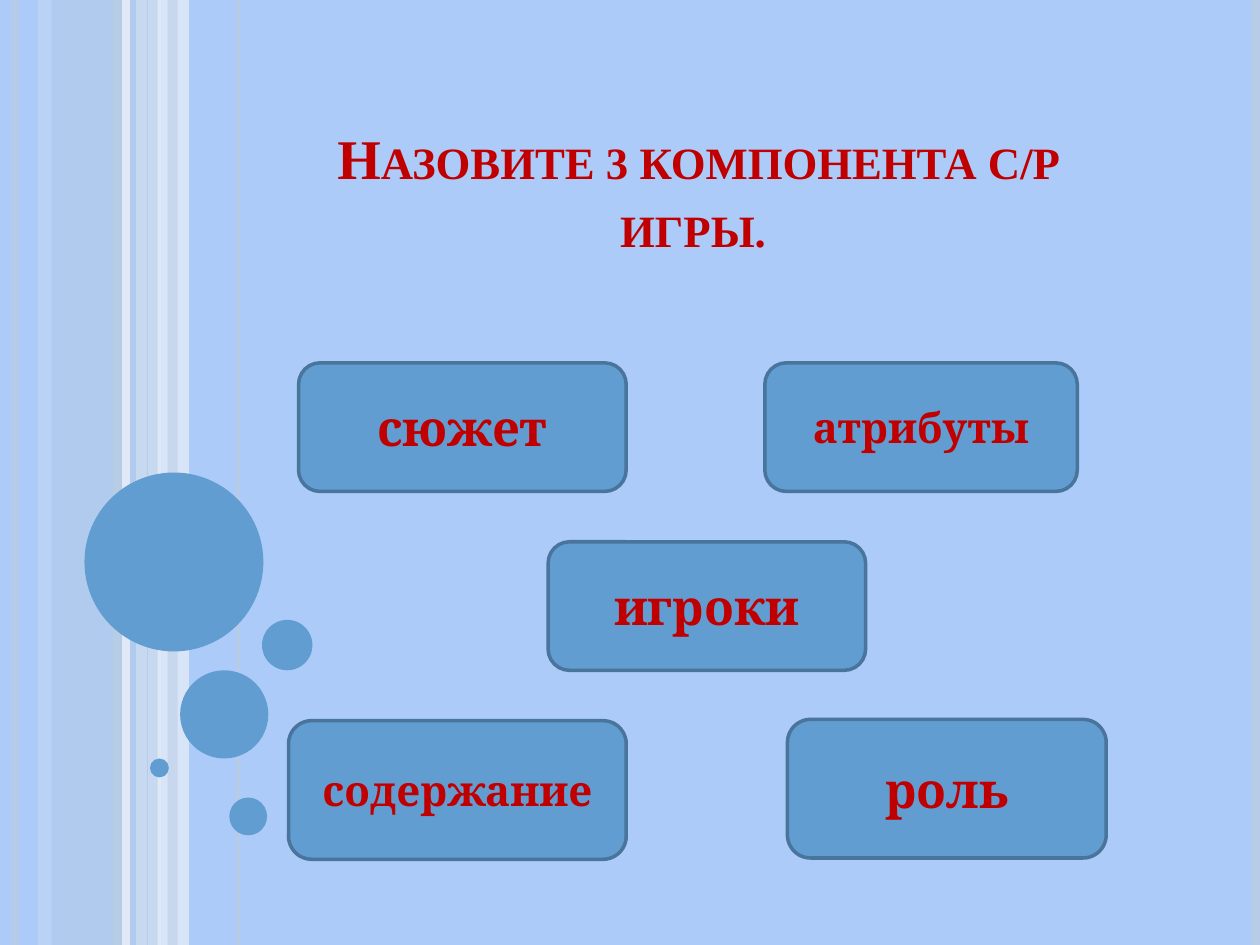
from lxml import etree
from pptx import Presentation
from pptx.dml.color import RGBColor
from pptx.enum import shapes, text
from pptx.oxml.ns import qn
from pptx.util import Inches, Pt

SKY = RGBColor(0xAC, 0xCB, 0xF9)
STEEL = RGBColor(0xB7, 0xCC, 0xE5)
MIST = RGBColor(0xD3, 0xDF, 0xEE)
PALE = RGBColor(0xEA, 0xEF, 0xF7)
BLUE = RGBColor(0x62, 0x9D, 0xD1)
EDGE = RGBColor(0x49, 0x74, 0x9B)
RED = RGBColor(0xC0, 0x00, 0x00)

HEIGHT = 7.5
BANDS = [(0.42, 0.67, STEEL, 54), (0.3, 0.11, MIST, 36), (1.08, 0.2, MIST, 70),
         (1.25, 0.25, PALE, 71)]
RULES = [(0.12, 4.5, STEEL, 73), (1, 4.5, PALE, 83), (0.93, 4.5, STEEL, 100),
         (1.89, 2.25, STEEL, 82), (1.17, 0.75, STEEL, 100), (9.97, 4.5, STEEL, 100)]
FRONT_BAND = (1.33, 0.08, STEEL, 51)
BUBBLES = [(0.67, 3.75, 1.42), (1.43, 5.32, 0.7), (1.19, 6.02, 0.15),
           (1.82, 6.33, 0.3), (2.08, 4.92, 0.4)]
ANSWERS = [("сюжет", 28, 2.37, 2.88, 2.6, 1.02),
           ("атрибуты", 24, 6.07, 2.88, 2.48, 1.02),
           ("игроки", 28, 4.35, 4.3, 2.52, 1.02),
           ("содержание", 24, 2.29, 5.72, 2.68, 1.1),
           ("роль", 28, 6.25, 5.71, 2.53, 1.1)]


def set_opacity(fill_element, percent):
    """Make the solid colour inside an element partly transparent."""
    if percent < 100:
        color = next(fill_element.iter(qn("a:srgbClr")))
        etree.SubElement(color, qn("a:alpha"), val=str(percent * 1000))


def add_filled(slide, kind, left, top, width, height, color):
    """Add a flat preset shape without an outline."""
    sp = slide.shapes.add_shape(kind, Inches(left), Inches(top), Inches(width), Inches(height))
    sp.shadow.inherit = False
    sp.fill.solid()
    sp.fill.fore_color.rgb = color
    sp.line.fill.background()
    return sp


def add_band(slide, left, width, color, opacity):
    """Add a vertical band over the full slide height."""
    sp = add_filled(slide, shapes.MSO_SHAPE.RECTANGLE, left, 0, width, HEIGHT, color)
    set_opacity(sp._element.spPr, opacity)


def add_rule(slide, x, weight, color, opacity):
    """Add a vertical line over the full slide height."""
    line = slide.shapes.add_connector(shapes.MSO_CONNECTOR.STRAIGHT,
                                      Inches(x), 0, Inches(x), Inches(HEIGHT))
    line.line.width = Pt(weight)
    line.line.color.rgb = color
    set_opacity(line._element.spPr, opacity)
    etree.SubElement(line._element.spPr, qn("a:effectLst"))


def format_text(p, name, size):
    """Centre a paragraph and set its bold red font."""
    p.alignment = text.PP_ALIGN.CENTER
    p.font.name = name
    p.font.size = Pt(size)
    p.font.bold = True
    p.font.color.rgb = RED


def add_answer(slide, label, size, left, top, width, height):
    """Add a rounded answer box with its label."""
    sp = add_filled(slide, shapes.MSO_SHAPE.ROUNDED_RECTANGLE, left, top, width, height, BLUE)
    sp.line.color.rgb = EDGE
    sp.line.width = Pt(2)
    tf = sp.text_frame
    tf.word_wrap = True
    tf.vertical_anchor = text.MSO_ANCHOR.MIDDLE
    tf.text = label
    format_text(tf.paragraphs[0], "Cambria", size)


def set_title(slide, wording):
    """Place the title and format it in small capitals."""
    title = slide.shapes.title
    title.left, title.top = Inches(2.17), Inches(0.6)
    title.width, title.height = Inches(6.75), Inches(1.5)
    tf = title.text_frame
    tf.word_wrap = True
    tf.auto_size = text.MSO_AUTO_SIZE.NONE
    tf.vertical_anchor = text.MSO_ANCHOR.BOTTOM
    tf.text = wording
    p = tf.paragraphs[0]
    format_text(p, "Times New Roman", 32)
    p.runs[0]._r.get_or_add_rPr().set("cap", "small")


def main():
    """Build the slide and save it."""
    prs = Presentation()
    prs.slide_width, prs.slide_height = Inches(10), Inches(HEIGHT)
    slide = prs.slides.add_slide(prs.slide_layouts[5])
    slide.background.fill.solid()
    slide.background.fill.fore_color.rgb = SKY
    for band in BANDS:
        add_band(slide, *band)
    for rule in RULES:
        add_rule(slide, *rule)
    add_band(slide, *FRONT_BAND)
    for left, top, size in BUBBLES:
        add_filled(slide, shapes.MSO_SHAPE.OVAL, left, top, size, size, BLUE)
    set_title(slide, "Назовите 3 компонента с/р игры. ")
    for answer in ANSWERS:
        add_answer(slide, *answer)
    prs.save("out.pptx")


if __name__ == "__main__":
    main()
